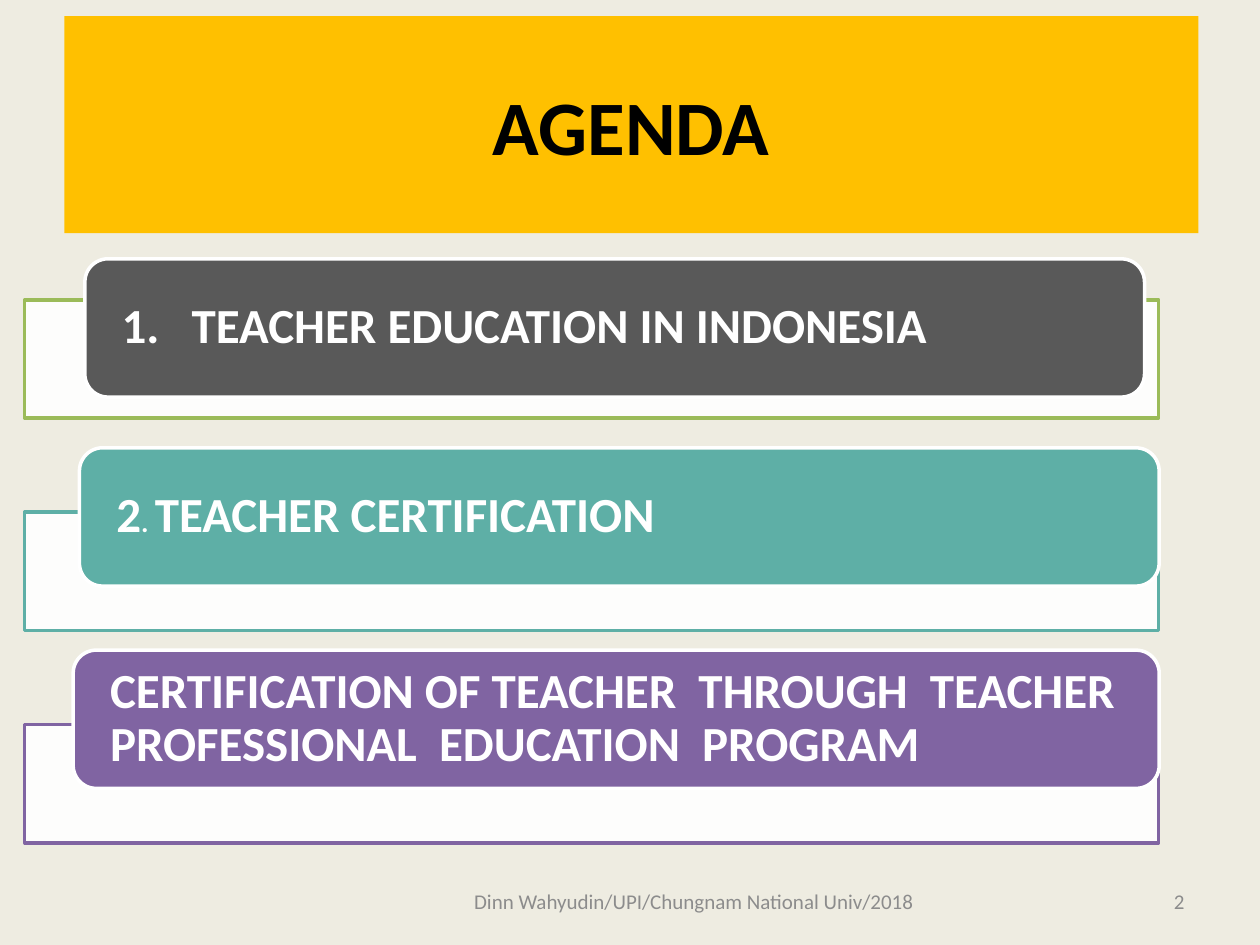
from dataclasses import dataclass
from lxml.etree import SubElement
from pptx import Presentation
from pptx.dml.color import RGBColor as Color
from pptx.enum.shapes import MSO_SHAPE as Preset
from pptx.enum.text import MSO_ANCHOR as Anchor, PP_ALIGN as Align
from pptx.oxml.ns import qn
from pptx.util import Pt


@dataclass(frozen=True)
class Theme:
    font: str = "Calibri"
    background: str = "EEECE1"
    banner: str = "FFC000"
    black: str = "000000"
    white: str = "FFFFFF"
    grey: str = "8C8C8C"
    dark: str = "595959"
    green: str = "9BBB59"
    teal: str = "5EAFA6"
    purple: str = "8064A2"
    title_size: int = 44
    item_size: int = 28
    dot_size: int = 16
    footer_size: int = 12


theme = Theme()


def add_box(preset, bounds, fill, line=None):
    shape = slide.shapes.add_shape(preset, *map(Pt, bounds))
    shape.shadow.inherit = False
    shape.fill.solid()
    shape.fill.fore_color.rgb = Color.from_string(fill)
    if line:
        shape.line.color.rgb = Color.from_string(line)
        shape.line.width = Pt(2)
    else:
        shape.line.fill.background()
    return shape


def write(shape, runs, color, align, bold=False, inset=(7.2, 3.6)):
    frame = shape.text_frame
    side, edge = map(Pt, inset)
    frame_format = {
        "word_wrap": True,
        "vertical_anchor": Anchor.MIDDLE,
        "margin_left": side,
        "margin_right": side,
        "margin_top": edge,
        "margin_bottom": edge,
    }
    for name, value in frame_format.items():
        setattr(frame, name, value)
    paragraph = frame.paragraphs[0]
    paragraph.alignment = align
    for text, size in runs:
        run = paragraph.add_run()
        run.text = text
        run.font.color.rgb = Color.from_string(color)
        for name, value in {"name": theme.font, "size": Pt(size), "bold": bold}.items():
            setattr(run.font, name, value)
    return paragraph


presentation = Presentation()
presentation.slide_width, presentation.slide_height = Pt(720), Pt(540)
slide = presentation.slides.add_slide(presentation.slide_layouts[6])
slide.background.fill.solid()
slide.background.fill.fore_color.rgb = Color.from_string(theme.background)

banner = add_box(Preset.RECTANGLE, (36.8, 9.2, 648, 124), theme.banner)
write(banner, [("AGENDA", theme.title_size)], theme.black, Align.CENTER, bold=True)

agenda = [
    (theme.green, theme.dark, (48.5, 147.9, 605.5),
     [("1.\tTEACHER EDUCATION IN INDONESIA", theme.item_size)], 40),
    (theme.teal, theme.teal, (45.4, 255.9, 617),
     [("2", theme.item_size), (". ", theme.dot_size),
      ("TEACHER CERTIFICATION", theme.item_size)], 0),
    (theme.purple, theme.purple, (41.8, 371.5, 620.6),
     [("CERTIFICATION OF TEACHER  THROUGH  TEACHER PROFESSIONAL  EDUCATION  PROGRAM",
       theme.item_size)], 0),
]
for index, (outline, fill, (left, top, width), runs, hanging) in enumerate(agenda):
    frame_box = add_box(Preset.RECTANGLE, (14.1, 171.3 + index * 121.4, 648, 67.5),
                        theme.white, outline)
    white_fill = frame_box.fill.fore_color._xFill.find(qn("a:srgbClr"))
    SubElement(white_fill, qn("a:alpha"), val="90000")

    label = add_box(Preset.ROUNDED_RECTANGLE, (left, top, width, 79), fill, theme.white)
    paragraph = write(label, runs, theme.white, Align.LEFT, bold=True, inset=(17.2, 0))
    paragraph.line_spacing = 0.9
    if hanging:
        properties = paragraph._p.get_or_add_pPr()
        properties.set("marL", str(Pt(hanging)))
        properties.set("indent", str(-Pt(hanging)))

footers = [
    ((516, 500.5, 168, 28.75), "2", Align.RIGHT),
    ((246, 500.5, 301, 28.75), "Dinn Wahyudin/UPI/Chungnam National Univ/2018", Align.CENTER),
]
for bounds, text, align in footers:
    footer = slide.shapes.add_textbox(*map(Pt, bounds))
    write(footer, [(text, theme.footer_size)], theme.grey, align)

presentation.save("out.pptx")
